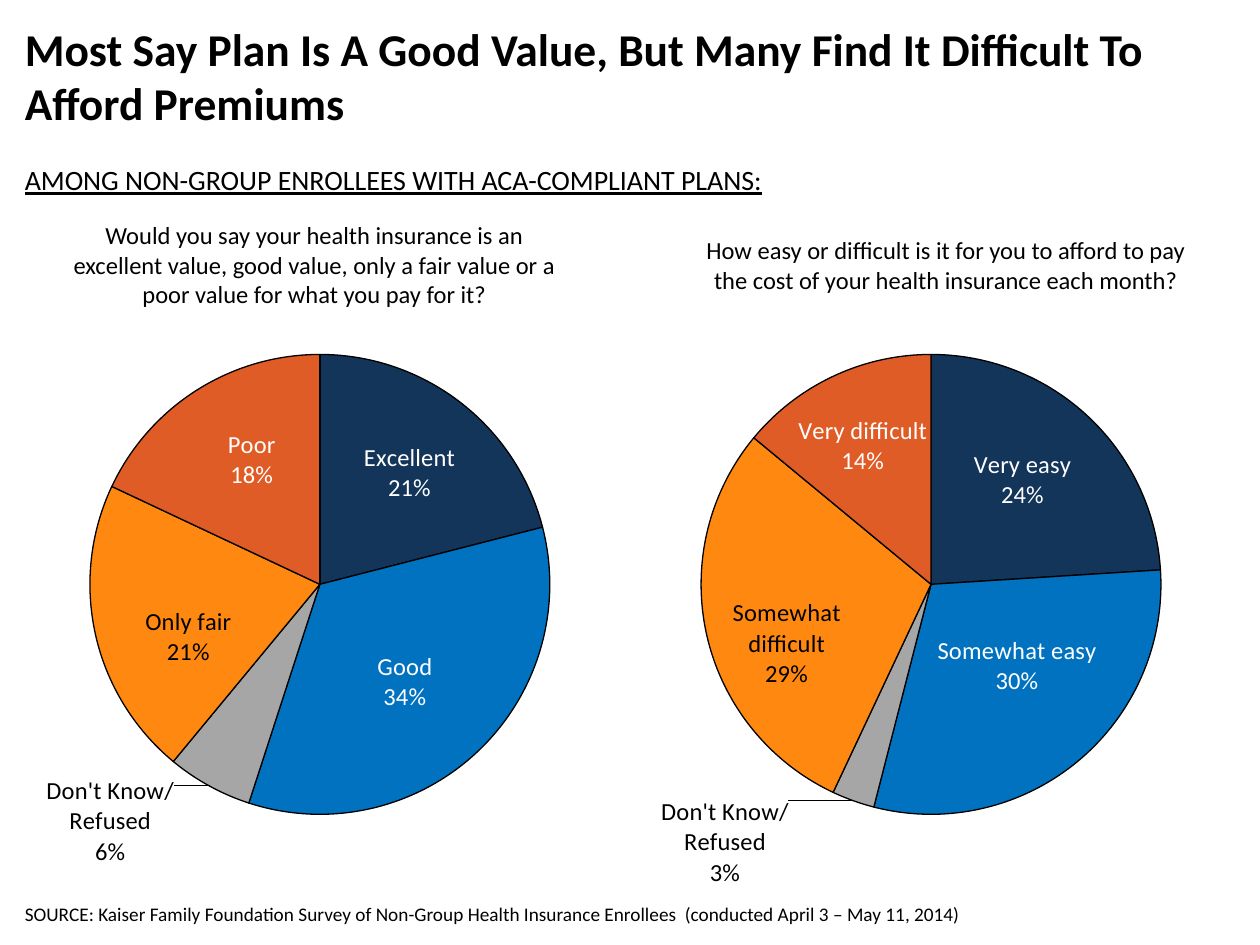
from dataclasses import dataclass

from lxml.etree import SubElement
from pptx import Presentation
from pptx.chart.data import CategoryChartData
from pptx.dml.color import RGBColor
from pptx.enum.chart import XL_CHART_TYPE, XL_LABEL_POSITION
from pptx.enum.text import MSO_ANCHOR, PP_ALIGN
from pptx.oxml import parse_xml
from pptx.oxml.ns import nsdecls, qn
from pptx.util import Cm, Pt


@dataclass(frozen=True)
class Theme:
    font: str = "Calibri"
    black: RGBColor = RGBColor(0, 0, 0)
    white: RGBColor = RGBColor(255, 255, 255)
    slices: tuple = ("133559", "0072C0", "A6A6A6", "FF8811", "E05C26")
    dark_label_slices: tuple = (2, 3)
    title_size: int = 26
    subtitle_size: int = 16
    question_size: int = 14
    label_size: int = 14
    chart_size: int = 13
    source_size: int = 11


THEME = Theme()

# Each slice: category, share, label shift (fractions of the chart size)
VALUE_SLICES = (
    ("Excellent", 0.21, (0.03, -0.03)),
    ("Good", 0.34, (0.01, 0.02)),
    ("Don't Know/ Refused", 0.06, (-0.24, 0.2)),
    ("Only fair", 0.21, (-0.03, 0.04)),
    ("Poor", 0.18, (-0.01, -0.04)),
)
COST_SLICES = (
    ("Very easy", 0.24, (0.02, -0.03)),
    ("Somewhat easy", 0.3, (0.02, -0.01)),
    ("Don't Know/ Refused", 0.03, (-0.26, 0.22)),
    ("Somewhat difficult", 0.29, (-0.05, 0.05)),
    ("Very difficult", 0.14, (-0.03, -0.05)),
)
# Label boxes narrow enough to wrap (fractions of the chart size)
LABEL_BOXES = {"Somewhat easy": (0.19, 0.14), "Very difficult": (0.14, 0.14)}
LABEL_EXTENSION = (
    '<c:extLst {space}><c:ext uri="{{CE6537A1-D6FC-4f65-9D91-7224C49458BB}}" '
    'xmlns:c15="http://schemas.microsoft.com/office/drawing/2012/chart">'
    '<c15:layout><c:manualLayout><c:w val="{width}"/><c:h val="{height}"/>'
    '</c:manualLayout></c15:layout></c:ext></c:extLst>')


def add_text(page, text, place, size, anchor=MSO_ANCHOR.TOP,
             align=PP_ALIGN.LEFT, bold=False, underline=False):
    box = page.shapes.add_textbox(*map(Cm, place))
    frame = box.text_frame
    frame.word_wrap = True
    frame.vertical_anchor = anchor
    para = frame.paragraphs[0]
    para.alignment = align
    span = para.add_run()
    span.text = text
    font = span.font
    font.name, font.size = THEME.font, Pt(size)
    font.bold, font.underline = bold, underline
    font.color.rgb = THEME.black


def manual_layout(settings):
    """Return a chart layout element holding the given settings."""
    layout = parse_xml(f"<c:layout {nsdecls('c')}><c:manualLayout/></c:layout>")
    for name, value in settings.items():
        SubElement(layout[0], qn(f"c:{name}"), val=str(value))
    return layout


def place_plot(chart):
    area = chart.plots[0]._element.getparent()
    for old in area.findall(qn("c:layout")):
        area.remove(old)
    area.insert(0, manual_layout({
        "layoutTarget": "inner", "xMode": "edge", "yMode": "edge",
        "x": 0.14, "y": 0.187, "w": 0.716, "h": 0.686}))


def style_label(series, index, name, shift):
    label = series.points[index].data_label
    label.font.name = THEME.font
    label.font.size = Pt(THEME.label_size)
    dark = index in THEME.dark_label_slices
    label.font.color.rgb = THEME.black if dark else THEME.white
    label.position = XL_LABEL_POSITION.CENTER

    # Category above value, moved from the middle of the slice
    item = series._element.find(qn("c:dLbls")).findall(qn("c:dLbl"))[index]
    item.find(qn("c:showCatName")).set("val", "1")
    SubElement(item, qn("c:separator")).text = "\n"
    item.insert(1, manual_layout(dict(zip("xy", shift))))
    if name in LABEL_BOXES:
        width, height = LABEL_BOXES[name]
        item.append(parse_xml(LABEL_EXTENSION.format(
            space=nsdecls("c"), width=width, height=height)))


def add_pie(page, slices, place):
    data = CategoryChartData(number_format="0%")
    data.categories = [name for name, _, _ in slices]
    data.add_series("Series 1", [share for _, share, _ in slices])
    chart = page.shapes.add_chart(
        XL_CHART_TYPE.PIE, *map(Cm, place), data).chart
    chart.has_legend = False
    chart.has_title = False
    chart.font.name = THEME.font
    chart.font.size = Pt(THEME.chart_size)
    chart.font.color.rgb = THEME.black
    plot = chart.plots[0]
    plot.vary_by_categories = True
    place_plot(chart)

    series = plot.series[0]
    series.format.line.color.rgb = THEME.black
    series.format.line.width = Pt(0.75)
    labels = series.data_labels
    labels.show_value = labels.show_category_name = True
    labels.number_format = "0%"
    labels.number_format_is_linked = False
    labels.font.size = Pt(THEME.label_size)
    labels.font.color.rgb = THEME.white

    for index, (name, _, shift) in enumerate(slices):
        look = series.points[index].format
        look.fill.solid()
        look.fill.fore_color.rgb = RGBColor.from_string(THEME.slices[index])
        look.line.color.rgb = THEME.black
        look.line.width = Pt(0.75)
        style_label(series, index, name, shift)


def main():
    deck = Presentation()
    deck.slide_width, deck.slide_height = Cm(25.4), Cm(19.05)
    page = deck.slides.add_slide(deck.slide_layouts[6])

    # Pies
    add_pie(page, COST_SLICES, (12.32, 4.5, 12.95, 13.74))
    add_pie(page, VALUE_SLICES, (0, 4.5, 12.95, 13.74))

    # Headings
    add_text(page, "Most Say Plan Is A Good Value, But Many Find It "
             "Difficult To Afford Premiums", (0.25, 0.25, 24.9, 2.54),
             THEME.title_size, anchor=MSO_ANCHOR.MIDDLE, bold=True)
    add_text(page, "AMONG NON-GROUP ENROLLEES WITH ACA-COMPLIANT PLANS:",
             (0.25, 3.15, 24.97, 1.52), THEME.subtitle_size, underline=True)

    # Survey questions
    add_text(page, "Would you say your health insurance is an excellent "
             "value, good value, only a fair value or a poor value for what "
             "you pay for it?", (1.22, 4.32, 10.24, 2.06),
             THEME.question_size, align=PP_ALIGN.CENTER)
    add_text(page, "How easy or difficult is it for you to afford to pay "
             "the cost of your health insurance each month?",
             (13.94, 4.62, 10.26, 1.45), THEME.question_size,
             align=PP_ALIGN.CENTER)

    # Source
    add_text(page, "SOURCE: Kaiser Family Foundation Survey of Non-Group "
             "Health Insurance Enrollees  (conducted April 3 – May 11, 2014)",
             (0.25, 17.27, 23.11, 1.52), THEME.source_size,
             anchor=MSO_ANCHOR.BOTTOM)

    deck.save("out.pptx")


if __name__ == "__main__":
    main()
